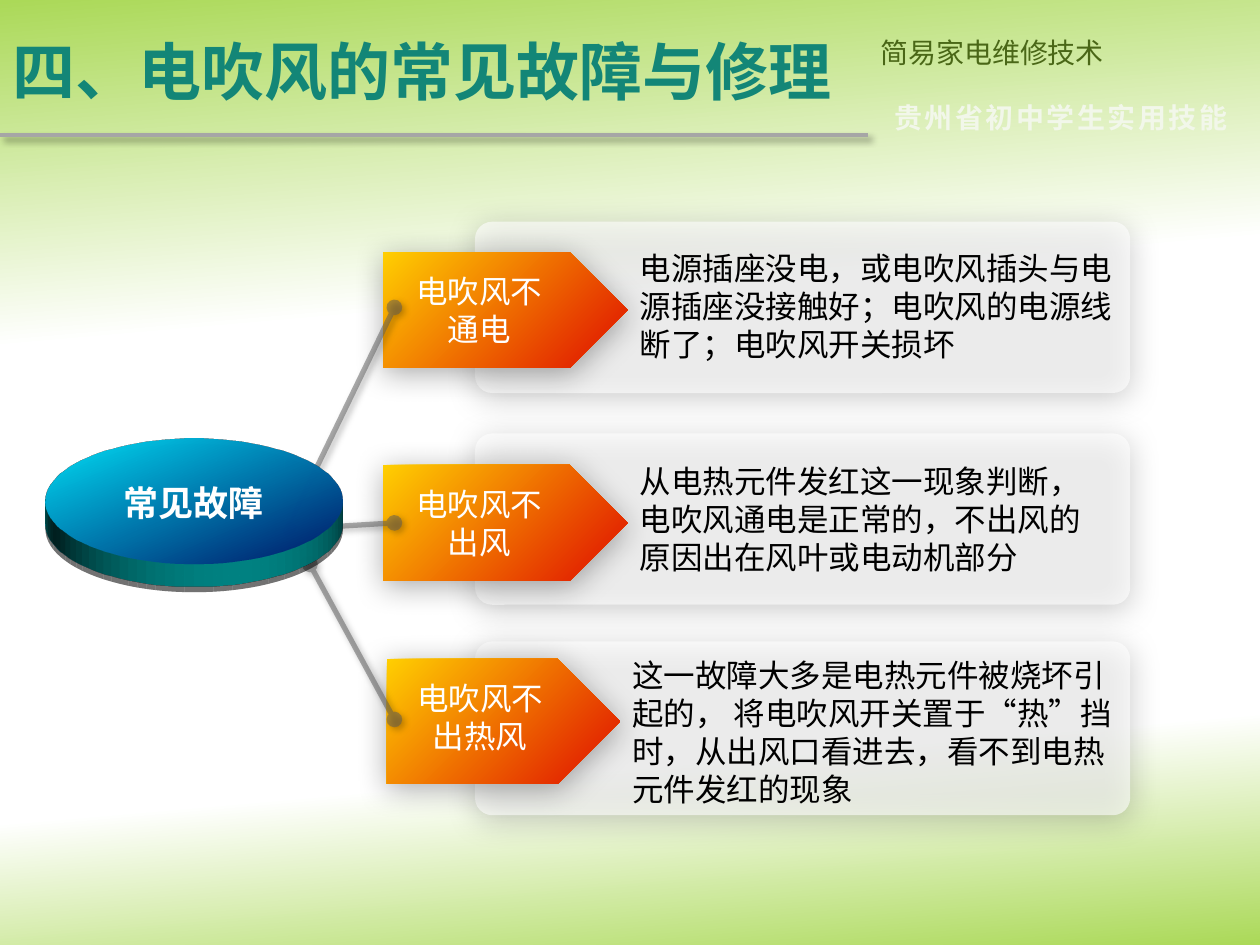
from dataclasses import dataclass, field

from lxml.etree import SubElement
from pptx import Presentation
from pptx.dml.color import RGBColor
from pptx.enum.shapes import MSO_CONNECTOR as Connector, MSO_SHAPE as Preset
from pptx.enum.text import MSO_ANCHOR as Anchor, PP_ALIGN as Align
from pptx.oxml import parse_xml
from pptx.oxml.ns import nsdecls, qn
from pptx.util import Inches, Pt

COLUMNS, ROWS = 100, 75
WIDTH, HEIGHT = Inches(10), Inches(7.5)


@dataclass(frozen=True)
class Theme:
    """Colours, type sizes and effects of the slide."""
    font: str = "Noto Sans CJK SC"
    title: dict = field(default_factory=lambda: {"size": 36, "bold": True, "color": "138677"})
    course: dict = field(default_factory=lambda: {"size": 16, "color": "4A6717"})
    series: dict = field(default_factory=lambda: {"size": 16, "bold": True, "color": "F2F7EA"})
    hub: dict = field(default_factory=lambda: {"size": 20, "bold": True, "color": "FFFFFF"})
    tag: dict = field(default_factory=lambda: {"size": 18, "color": "FFFFFF"})
    body: dict = field(default_factory=lambda: {"size": 18, "color": "000000"})
    meadow: tuple = ((0, "ABD958"), (33, "FFFFFF"), (52, "FFFFFF"), (78, "FFFFFF"), (100, "ABD958"))
    flame: tuple = ((0, "FFCF01"), (90, "E22000"))
    ocean: tuple = ((0, "00DFF6"), (90, "002774"))
    panel: str = "FFFFFF"
    rim: str = "00FFFF"
    spoke: str = "595959"
    rule: str = "A6A6A6"
    soft_shadow: tuple = (33, 17.8, 3, 87)
    spoke_shadow: tuple = (50, 4, 2, 45)
    rule_shadow: tuple = (40, 4, 3, 45)


THEME = Theme()


@dataclass(frozen=True)
class Fault:
    """One fault with its cause; boxes are in grid columns and rows."""
    name: str
    cause: str
    panel: tuple
    cause_box: tuple
    tag: tuple
    name_box: tuple
    spoke: tuple


FAULTS = (
    Fault("电吹风不通电",
          "电源插座没电，或电吹风插头与电源插座没接触好；电吹风的电源线断了；电吹风开关损坏",
          (37.7, 17.6, 52, 13.6), (49.8, 19.3, 39.9, 10.1),
          (30.4, 20, 19.4, 9.2), (31.8, 21.1, 12.5, 7.1), (21.4, 44.8, 31.3, 24.4)),
    Fault("电吹风不出风",
          "从电热元件发红这一现象判断，电吹风通电是正常的，不出风的原因出在风叶或电动机部分",
          (37.7, 34.4, 52, 13.6), (49.8, 36.2, 38.6, 10.1),
          (30.4, 36.9, 19.4, 9.2), (31.8, 38, 12.5, 7.1), (23, 42, 31.3, 41.5)),
    Fault("电吹风不出热风",
          "这一故障大多是电热元件被烧坏引起的， 将电吹风开关置于“热”挡时，从出风口看进去，看不到电热元件发红的现象",
          (37.7, 50.9, 52, 13.8), (49.2, 51.6, 41.1, 13.1),
          (30.7, 52.3, 18.5, 9.9), (31.9, 53.4, 12.4, 7.1), (24.6, 44.8, 31.3, 57.1)),
)


def grid(column, row, *rest):
    """Turn alternating columns and rows into slide lengths."""
    units = (WIDTH / COLUMNS, HEIGHT / ROWS)
    return [int(value * units[i % 2]) for i, value in enumerate((column, row, *rest))]


def set_opacity(element, percent):
    """Set the opacity of the first colour inside an element."""
    SubElement(element.xpath(".//a:srgbClr")[0], qn("a:alpha")).set("val", str(percent * 1000))


def add_shadow(shape, shadow):
    """Give a shape or connector an outer shadow."""
    opacity, blur, distance, angle = shadow
    shape.element.spPr.append(parse_xml(
        f'<a:effectLst {nsdecls("a")}><a:outerShdw blurRad="{Pt(blur)}" dist="{Pt(distance)}" '
        f'dir="{angle * 60000}" algn="ctr" rotWithShape="0"><a:srgbClr val="000000">'
        f'<a:alpha val="{opacity * 1000}"/></a:srgbClr></a:outerShdw></a:effectLst>'))


def fill_gradient(owner, fill, stops, angle):
    """Fill with a linear gradient of any number of stops."""
    fill.gradient()
    gradient = owner.xpath(".//a:gradFill")[0]
    stop_list = gradient.find(qn("a:gsLst"))
    for old_stop in list(stop_list):
        stop_list.remove(old_stop)
    for position, color in stops:
        stop = SubElement(stop_list, qn("a:gs"), pos=str(position * 1000))
        SubElement(stop, qn("a:srgbClr"), val=color)
    gradient.find(qn("a:lin")).set("ang", str(angle * 60000))


def write(frame, text, style, align=Align.LEFT, anchor=Anchor.TOP):
    """Write one styled paragraph into a text frame."""
    frame.word_wrap = True
    frame.vertical_anchor = anchor
    paragraph = frame.paragraphs[0]
    paragraph.alignment = align
    run = paragraph.add_run()
    run.text = text
    formats = {"name": THEME.font, "size": Pt(style["size"]), "bold": style.get("bold", False)}
    for attribute, value in formats.items():
        setattr(run.font, attribute, value)
    run.font.color.rgb = RGBColor.from_string(style["color"])
    properties = run.font._element
    SubElement(properties, qn("a:ea"), typeface=THEME.font)
    return properties


def add_text(shapes, box, text, style, align=Align.LEFT):
    """Add a wrapping text box on the grid."""
    return write(shapes.add_textbox(*grid(*box)).text_frame, text, style, align)


def add_plate(shapes, preset, box):
    """Add a preset shape without outline."""
    plate = shapes.add_shape(preset, *grid(*box))
    plate.line.fill.background()
    return plate


def add_line(shapes, ends, color, weight, shadow, opacity=100, dots=False):
    """Add a straight line, with round ends if asked."""
    line = shapes.add_connector(Connector.STRAIGHT, *grid(*ends))
    line.line.color.rgb = RGBColor.from_string(color)
    line.line.width = Pt(weight)
    outline = line.element.spPr.find(qn("a:ln"))
    set_opacity(outline, opacity)
    for end in ("a:headEnd", "a:tailEnd") if dots else ():
        SubElement(outline, qn(end), type="oval")
    add_shadow(line, shadow)


def add_fault(slide, fault):
    """Add the panel, cause, tag and spoke of one fault."""
    parts = slide.shapes.add_group_shape().shapes
    panel = add_plate(parts, Preset.ROUNDED_RECTANGLE, fault.panel)
    panel.adjustments[0] = 0.1
    panel.fill.solid()
    panel.fill.fore_color.rgb = RGBColor.from_string(THEME.panel)
    set_opacity(panel.element.spPr, 60)
    add_shadow(panel, THEME.soft_shadow)
    add_text(parts, fault.cause_box, fault.cause, THEME.body)
    tag = add_plate(parts, Preset.PENTAGON, fault.tag)
    fill_gradient(tag.element, tag.fill, THEME.flame, 45)
    add_shadow(tag, THEME.soft_shadow)
    add_text(parts, fault.name_box, fault.name, THEME.tag, Align.CENTER)
    add_line(parts, fault.spoke, THEME.spoke, 3, THEME.spoke_shadow, 50, dots=True)


def add_hub(slide):
    """Add the tilted disc that the spokes start from."""
    parts = slide.shapes.add_group_shape().shapes
    disc = add_plate(parts, Preset.OVAL, (3.6, 28, 23.6, 23.6))
    fill_gradient(disc.element, disc.fill, THEME.ocean, 45)
    add_shadow(disc, THEME.soft_shadow)
    for effect in (
        '<a:scene3d {}><a:camera prst="orthographicFront"><a:rot lat="17700000" lon="0" rev="0"/>'
        '</a:camera><a:lightRig rig="threePt" dir="t"/></a:scene3d>',
        f'<a:sp3d {{}} extrusionH="{Inches(0.2)}"><a:extrusionClr><a:srgbClr val="{THEME.rim}"/>'
        '</a:extrusionClr></a:sp3d>',
    ):
        disc.element.spPr.append(parse_xml(effect.format(nsdecls("a"))))
    add_text(parts, (3.6, 37.7, 23.6, 4.4), "常见故障", THEME.hub, Align.CENTER)


def add_heading(slide):
    """Fill the title and add the course lines and the rule."""
    title = slide.shapes.title
    for attribute, value in zip(("left", "top", "width", "height"), grid(0, 0.5, 68.9, 10.2)):
        setattr(title, attribute, value)
    write(title.text_frame, "四、电吹风的常见故障与修理", THEME.title, anchor=Anchor.MIDDLE)
    add_text(slide.shapes, (68.9, 2.3, 31.1, 3.7), "简易家电维修技术", THEME.course, Align.JUSTIFY)
    series = add_text(slide.shapes, (70, 7.5, 30, 3.7), "贵州省初中学生实用技能", THEME.series)
    series.set("spc", "150")
    add_line(slide.shapes, (0, 10.7, 68.9, 10.7), THEME.rule, 2.25, THEME.rule_shadow)


def main():
    """Build and save the slide."""
    deck = Presentation()
    deck.slide_width, deck.slide_height = WIDTH, HEIGHT
    slide = deck.slides.add_slide(deck.slide_layouts.get_by_name("Title Only"))
    fill_gradient(slide.element, slide.background.fill, THEME.meadow, 85)
    add_heading(slide)
    for fault in FAULTS:
        add_fault(slide, fault)
    add_hub(slide)
    deck.save("out.pptx")


if __name__ == "__main__":
    main()
